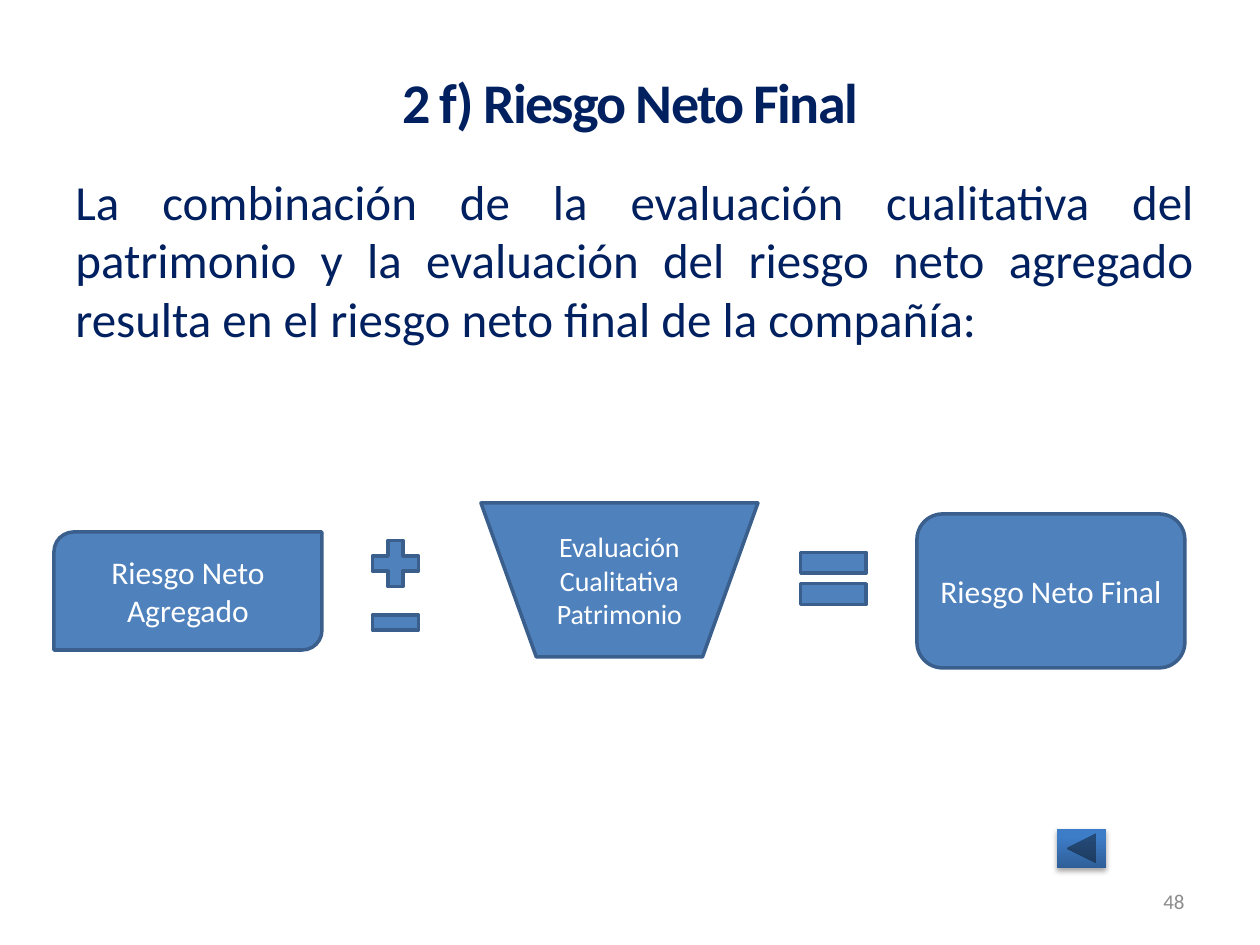
"""Build the slide that shows how the final net risk is obtained."""
from lxml import etree
from pptx import Presentation
from pptx.dml.color import RGBColor
from pptx.enum.shapes import MSO_SHAPE as SHAPE
from pptx.enum.text import MSO_ANCHOR, MSO_AUTO_SIZE, PP_ALIGN
from pptx.util import Emu, Pt

TOP, MIDDLE = MSO_ANCHOR.TOP, MSO_ANCHOR.MIDDLE
CENTER, JUSTIFY, RIGHT = PP_ALIGN.CENTER, PP_ALIGN.JUSTIFY, PP_ALIGN.RIGHT
PX = 914400 // 126

TITLE = ("2 f) Riesgo Neto Final", (63, 38, 1134, 157))
BODY = (
    "La combinación de la evaluación cualitativa del patrimonio y la evaluación "
    "del riesgo neto agregado resulta en el riesgo neto final de la compañía:",
    (63, 165, 1143, 238),
)
NUMBER = ("48", (903, 876, 294, 50))
BACK_BUTTON = (1057, 829, 49, 39)
FORMULA = [
    (SHAPE.ROUND_2_DIAG_RECTANGLE, (54, 532, 268, 118), "Riesgo Neto Agregado", "box"),
    (SHAPE.MATH_PLUS, (364, 532, 63, 63), "", "box"),
    (SHAPE.MATH_MINUS, (364, 591, 63, 63), "", "box"),
    (SHAPE.FLOWCHART_MANUAL_OPERATION, (481, 503, 277, 154),
     "Evaluación Cualitativa Patrimonio", "funnel"),
    (SHAPE.MATH_EQUAL, (789, 534, 89, 89), "", "box"),
    (SHAPE.FLOWCHART_ALTERNATE_PROCESS, (917, 514, 268, 154), "Riesgo Neto Final", "box"),
]
THEME = {
    "font": "Calibri",
    "color": {"navy": "002060", "fill": "4F81BD", "line": "3A5F8C", "text": "FFFFFF",
              "number": "8C8C8C", "dark": "2F5F99", "light": "3D7CC7"},
    "size": {"title": 32, "body": 28, "box": 18, "funnel": 16, "number": 12},
}
SHADOW = (
    '<a:effectLst xmlns:a="http://schemas.openxmlformats.org/drawingml/2006/main">'
    '<a:outerShdw blurRad="39370" dist="22860" dir="5400000" rotWithShape="0">'
    '<a:srgbClr val="000000"><a:alpha val="35000"/></a:srgbClr>'
    '</a:outerShdw></a:effectLst>'
)


def color(name):
    """Return a theme colour."""
    return RGBColor.from_string(THEME["color"][name])


def emu(box):
    """Turn px lengths into EMU."""
    return [Emu(v * PX) for v in box]


def write(sp, text, size, ink, align=CENTER, anchor=MIDDLE, bold=False, spacing=0):
    """Put one formatted paragraph into a shape."""
    tf = sp.text_frame
    tf.word_wrap = True
    tf.auto_size = MSO_AUTO_SIZE.NONE
    tf.vertical_anchor = anchor
    p = tf.paragraphs[0]
    p.alignment = align
    r = p.add_run()
    r.text = text
    r.font.name = THEME["font"]
    r.font.size = Pt(THEME["size"][size])
    r.font.bold = bold
    r.font.color.rgb = color(ink)
    if spacing:
        r._r.get_or_add_rPr().set("spc", str(spacing * 100))


def add_formula(s):
    """Draw the boxes and the signs between them."""
    for kind, box, text, size in FORMULA:
        sp = s.shapes.add_shape(kind, *emu(box))
        sp.shadow.inherit = False
        sp.fill.solid()
        sp.fill.fore_color.rgb = color("fill")
        sp.line.color.rgb = color("line")
        sp.line.width = Pt(2)
        if text:
            write(sp, text, size, "text")


def add_back_button(s):
    """Draw the back button with its gradient and shadow."""
    sp = s.shapes.add_shape(SHAPE.ACTION_BUTTON_BACK_OR_PREVIOUS, *emu(BACK_BUTTON))
    sp.line.fill.background()
    sp.fill.gradient()
    sp.fill.gradient_angle = 90
    for stop, name, position in zip(sp.fill.gradient_stops, ("dark", "light"), (0, 0.8)):
        stop.color.rgb = color(name)
        stop.position = position
    sp._element.spPr.append(etree.fromstring(SHADOW))


def main():
    """Build and save the slide."""
    prs = Presentation()
    prs.slide_width, prs.slide_height = emu((1260, 945))
    s = prs.slides.add_slide(prs.slide_layouts[5])

    text, box = TITLE
    title = s.shapes.title
    title.left, title.top, title.width, title.height = emu(box)
    title.text_frame.margin_bottom = Emu(38 * PX)
    write(title, text, "title", "navy", bold=True, spacing=-1)

    text, box = BODY
    write(s.shapes.add_textbox(*emu(box)), text, "body", "navy", JUSTIFY, TOP)
    add_formula(s)
    text, box = NUMBER
    write(s.shapes.add_textbox(*emu(box)), text, "number", "number", RIGHT)
    add_back_button(s)
    prs.save("out.pptx")


if __name__ == "__main__":
    main()
